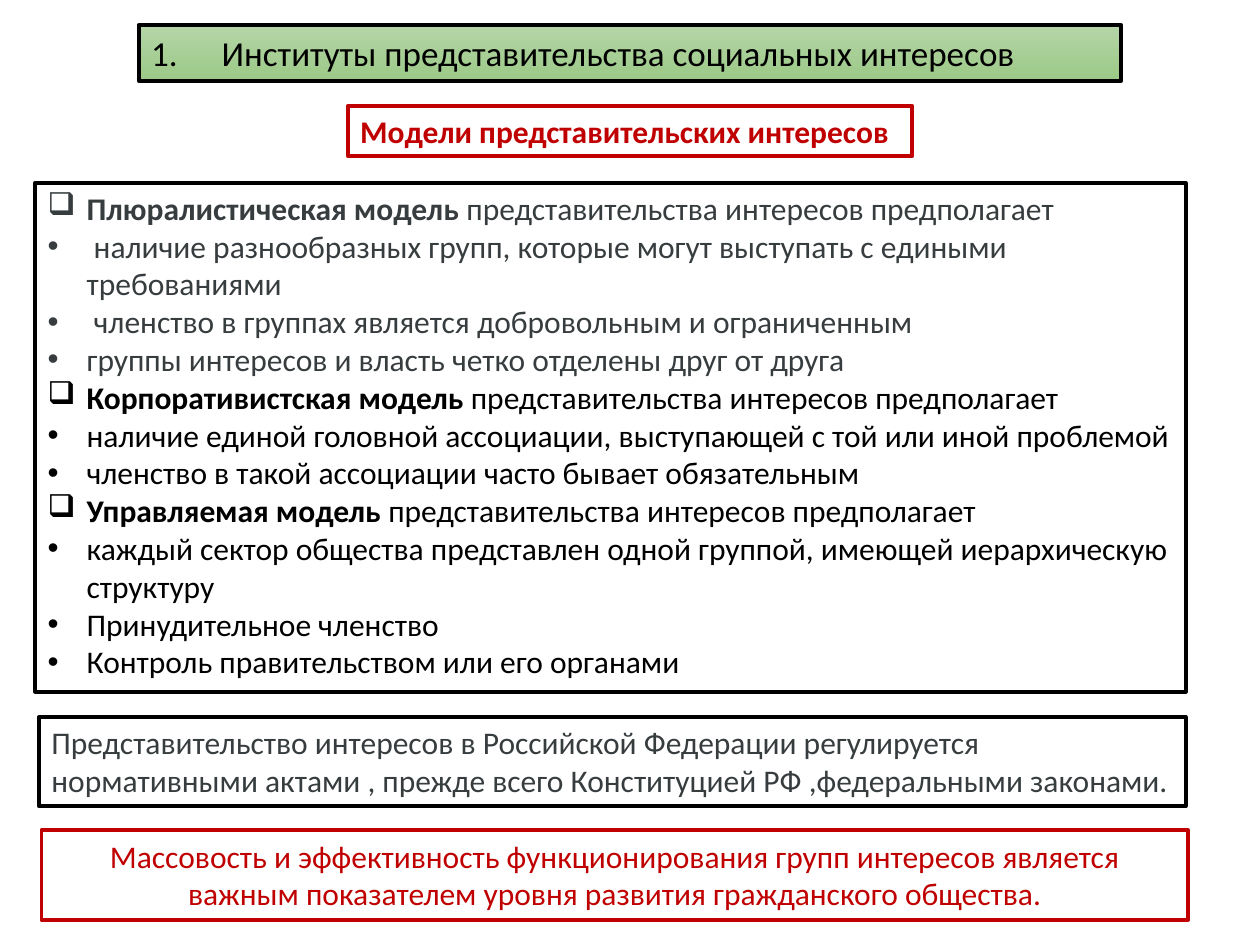
from lxml import etree
from pptx import Presentation
from pptx.dml.color import RGBColor
from pptx.enum import text
from pptx.oxml.ns import qn
from pptx.util import Inches, Pt

BLACK = RGBColor(0x00, 0x00, 0x00)
WHITE = RGBColor(0xFF, 0xFF, 0xFF)
RED = RGBColor(0xC0, 0x00, 0x00)
SLATE = RGBColor(0x37, 0x3D, 0x3F)
GREEN_TOP = RGBColor(0xB5, 0xD5, 0xA7)
GREEN_BOTTOM = RGBColor(0x9C, 0xC9, 0x87)
FONT = "Calibri"

MODELS = [
    ("Плюралистическая модель ", SLATE, [
        " наличие разнообразных групп, которые могут выступать с едиными требованиями",
        " членство в группах является добровольным и ограниченным",
        "группы интересов и власть четко отделены друг от друга",
    ]),
    ("Корпоративистская модель ", BLACK, [
        "наличие единой головной ассоциации, выступающей с той или иной проблемой",
        "членство в такой ассоциации часто бывает обязательным",
    ]),
    ("Управляемая модель ", BLACK, [
        "каждый сектор общества представлен одной группой, имеющей иерархическую структуру",
        "Принудительное членство",
        "Контроль правительством или его органами",
    ]),
]


def set_font(paragraph, color, size=18, bold=False):
    """Format the text of a whole paragraph."""
    font = paragraph.font
    font.name, font.size, font.bold = FONT, Pt(size), bold
    font.color.rgb = color


def set_marker(paragraph, indent, typeface, tag, **attributes):
    """Give a paragraph a hanging bullet or number."""
    properties = paragraph._p.get_or_add_pPr()
    properties.set("marL", str(Inches(indent)))
    properties.set("indent", str(-Inches(indent)))
    etree.SubElement(properties, qn("a:buFont"), typeface=typeface)
    etree.SubElement(properties, qn(tag), **attributes)


def set_outline(shape, color):
    """Draw the border shared by all boxes."""
    shape.line.color.rgb = color
    shape.line.width = Pt(2.25)


def add_title(slide, box):
    """Place the numbered title on its green band."""
    title = slide.shapes.title
    title.left, title.top, title.width, title.height = map(Inches, box)
    title.fill.gradient()
    title.fill.gradient_angle = 270
    for stop, color in zip(title.fill.gradient_stops, (GREEN_TOP, GREEN_BOTTOM)):
        stop.color.rgb = color
        stop.position = 0 if color == GREEN_TOP else 1
    set_outline(title, BLACK)
    frame = title.text_frame
    frame.text = "Институты представительства социальных интересов"
    frame.auto_size = text.MSO_AUTO_SIZE.NONE
    frame.vertical_anchor = text.MSO_ANCHOR.MIDDLE
    heading = frame.paragraphs[0]
    heading.alignment = text.PP_ALIGN.LEFT
    set_marker(heading, 0.56, "+mj-lt", "a:buAutoNum", type="arabicPeriod")
    set_font(heading, BLACK, 20)


def add_box(slide, box, border):
    """Add a white bordered box and return its text frame."""
    panel = slide.shapes.add_textbox(*map(Inches, box))
    panel.fill.solid()
    panel.fill.fore_color.rgb = WHITE
    set_outline(panel, border)
    frame = panel.text_frame
    frame.word_wrap = True
    frame.auto_size = text.MSO_AUTO_SIZE.SHAPE_TO_FIT_TEXT
    return frame


def add_statement(slide, box, wording, color, border, bold=False, align=text.PP_ALIGN.LEFT):
    """Place a box holding one statement."""
    frame = add_box(slide, box, border)
    frame.text = wording
    statement = frame.paragraphs[0]
    statement.alignment = align
    set_font(statement, color, bold=bold)


def add_models(slide, box):
    """Place the list of models with their features."""
    frame = add_box(slide, box, BLACK)
    for index, (name, color, features) in enumerate(MODELS):
        model = frame.add_paragraph() if index else frame.paragraphs[0]
        set_marker(model, 0.31, "Wingdings", "a:buChar", char="q")
        set_font(model, color)
        for wording, bold in ((name, True), ("представительства интересов предполагает", False)):
            run = model.add_run()
            run.text = wording
            run.font.bold = bold
        for wording in features:
            feature = frame.add_paragraph()
            feature.text = wording
            set_marker(feature, 0.31, "Arial", "a:buChar", char="•")
            set_font(feature, color)


def main():
    """Build and save the slide."""
    deck = Presentation()
    deck.slide_width, deck.slide_height = Inches(10), Inches(7.5)
    slide = deck.slides.add_slide(deck.slide_layouts.get_by_name("Title Only"))
    add_title(slide, (1.1, 0.2, 7.8, 0.44))
    add_statement(slide, (2.76, 0.84, 4.48, 0.4), "Модели представительских интересов",
                  RED, RED, bold=True)
    add_models(slide, (0.28, 1.45, 9.13, 4.04))
    add_statement(slide, (0.31, 5.69, 9.1, 0.71),
                  "Представительство интересов в Российской Федерации регулируется "
                  "нормативными актами , прежде всего Конституцией РФ ,федеральными законами.",
                  SLATE, BLACK)
    add_statement(slide, (0.33, 6.59, 9.1, 0.71),
                  "Массовость и эффективность функционирования групп интересов является "
                  "важным показателем уровня развития гражданского общества.",
                  RED, RED, align=text.PP_ALIGN.CENTER)
    deck.save("out.pptx")


if __name__ == "__main__":
    main()
